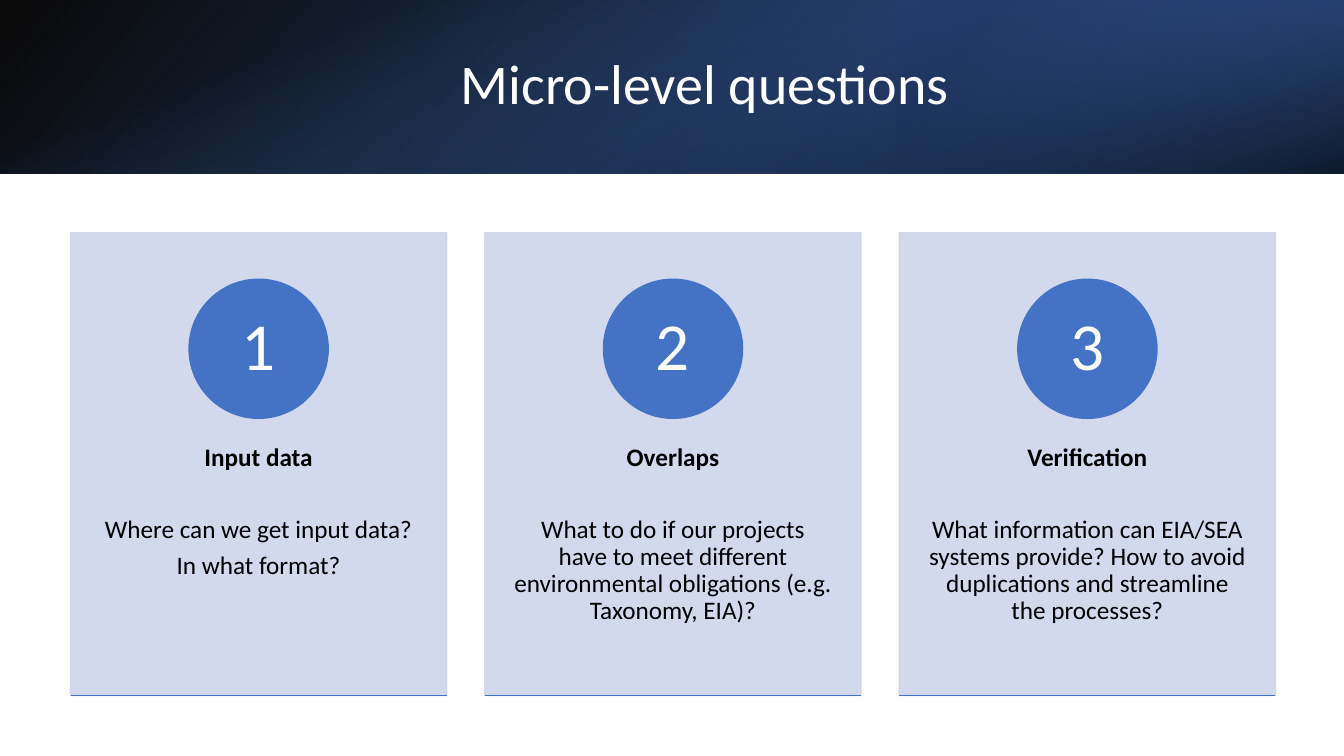
from pptx import Presentation
from pptx.dml.color import RGBColor
from pptx.enum.shapes import MSO_CONNECTOR, MSO_SHAPE
from pptx.enum.text import MSO_ANCHOR, PP_ALIGN
from pptx.oxml.ns import qn
from pptx.util import Inches, Pt
from lxml import etree

RECTANGLE, OVAL = MSO_SHAPE.RECTANGLE, MSO_SHAPE.OVAL
STRAIGHT = MSO_CONNECTOR.STRAIGHT
MIDDLE, CENTER = MSO_ANCHOR.MIDDLE, PP_ALIGN.CENTER

BLUE, PALE, BLACK, WHITE = "4472C4", "CFD5EA", "000000", "FFFFFF"
SLIDE_W, SLIDE_H, BANNER_H = 13.33, 7.5, 1.72
CARD_W, CARD_H, CARD_TOP, CARD_LEFT, CARD_STEP = 3.73, 4.59, 2.31, 0.7, 4.11
CIRCLE = 1.38
CARD_BOTTOM = CARD_TOP + CARD_H


def color(value):
    return RGBColor.from_string(value)


def write(frame, paragraphs, **frame_format):
    """Fill a text frame from (text, size, colour, bold, space after) rows."""
    frame.word_wrap = True
    for name, value in frame_format.items():
        setattr(frame, name, value)
    for index, (text, size, hue, bold, after) in enumerate(paragraphs):
        paragraph = frame.add_paragraph() if index else frame.paragraphs[0]
        paragraph.alignment = CENTER
        paragraph.line_spacing = 0.9
        paragraph.space_after = Pt(after)
        run = paragraph.add_run()
        run.text = text
        run.font.color.rgb = color(hue)
        font_format = {"name": "Calibri", "size": Pt(size), "bold": bold}
        for name, value in font_format.items():
            setattr(run.font, name, value)


prs = Presentation()
prs.slide_width, prs.slide_height = Inches(SLIDE_W), Inches(SLIDE_H)
slide = prs.slides.add_slide(prs.slide_layouts[6])
shapes = slide.shapes

# Banner: three gradient layers; stops are (position, colour, opacity in percent)
turned_left = (SLIDE_W - BANNER_H) / 2
banner_layers = [
    ((0, 0, SLIDE_W, BANNER_H), 0, True, 140,
     [(0, BLACK, 96), (100, "2F5597", 100)]),
    ((SLIDE_W * 2 / 3, 0, SLIDE_W / 3, BANNER_H), 180, True, 320,
     [(19, "203864", 68), (100, BLUE, 79)]),
    ((turned_left, -turned_left, BANNER_H, SLIDE_W), 90, False, 340,
     [(23, BLUE, 0), (99, BLACK, 74)]),
]
for box, rotation, flipped, angle, stops in banner_layers:
    layer = shapes.add_shape(RECTANGLE, *map(Inches, box))
    layer.shadow.inherit = False
    layer.line.fill.background()
    layer.rotation = rotation
    if flipped:
        layer.element.spPr.find(qn("a:xfrm")).set("flipH", "1")
    layer.fill.gradient()
    layer.fill.gradient_angle = 360 - angle
    for stop, (position, hue, _) in zip(layer.fill.gradient_stops, stops):
        stop.position = position / 100
        stop.color.rgb = color(hue)
    tints = layer.element.spPr.iter(qn("a:srgbClr"))
    for tint, (_, _, opacity) in zip(list(tints), stops):
        etree.SubElement(tint, qn("a:alpha")).set("val", str(opacity * 1000))

title = shapes.add_textbox(Inches(1.5), Inches(0.38), Inches(10.98), Inches(0.96))
write(title.text_frame, [("Micro-level questions", 40, WHITE, False, 0)],
      vertical_anchor=MIDDLE)

# Numbered question cards
cards = [
    ("Input data", ["Where can we get input data?", "In what format?"]),
    ("Overlaps", ["What to do if our projects have to meet different "
                  "environmental obligations (e.g. Taxonomy, EIA)?"]),
    ("Verification", ["What information can EIA/SEA systems provide? How to avoid "
                      "duplications and streamline the processes?"]),
]
for index, (heading, questions) in enumerate(cards):
    left = CARD_LEFT + index * CARD_STEP

    card = shapes.add_shape(RECTANGLE, Inches(left), Inches(CARD_TOP),
                            Inches(CARD_W), Inches(CARD_H))
    card.shadow.inherit = False
    card.fill.solid()
    card.fill.fore_color.rgb = color(PALE)
    card.line.color.rgb = color(PALE)
    card.line.width = Pt(1)
    for tint in list(card.element.spPr.iter(qn("a:srgbClr"))):
        etree.SubElement(tint, qn("a:alpha")).set("val", "90000")

    body = shapes.add_textbox(Inches(left), Inches(4.05), Inches(CARD_W), Inches(2.75))
    rows = [(heading, 18, BLACK, True, 32)]
    rows += [(question, 18, BLACK, False, 6.3) for question in questions]
    write(body.text_frame, rows,
          margin_left=Inches(0.29), margin_right=Inches(0.29),
          margin_top=Inches(0.36), margin_bottom=Inches(0.36))

    badge = shapes.add_shape(OVAL, Inches(left + (CARD_W - CIRCLE) / 2), Inches(2.77),
                             Inches(CIRCLE), Inches(CIRCLE))
    badge.shadow.inherit = False
    badge.fill.solid()
    badge.fill.fore_color.rgb = color(BLUE)
    badge.line.color.rgb = color(BLUE)
    badge.line.width = Pt(1)
    write(badge.text_frame, [(str(index + 1), 48, WHITE, False, 0)],
          vertical_anchor=MIDDLE, margin_left=Inches(0.11), margin_right=Inches(0.11),
          margin_top=Inches(0.01), margin_bottom=Inches(0.01))

    underline = shapes.add_connector(STRAIGHT, Inches(left), Inches(CARD_BOTTOM),
                                     Inches(left + CARD_W), Inches(CARD_BOTTOM))
    underline.line.color.rgb = color(BLUE)
    underline.line.width = Pt(1)
    etree.SubElement(underline.element.spPr, qn("a:effectLst"))

prs.save("out.pptx")
